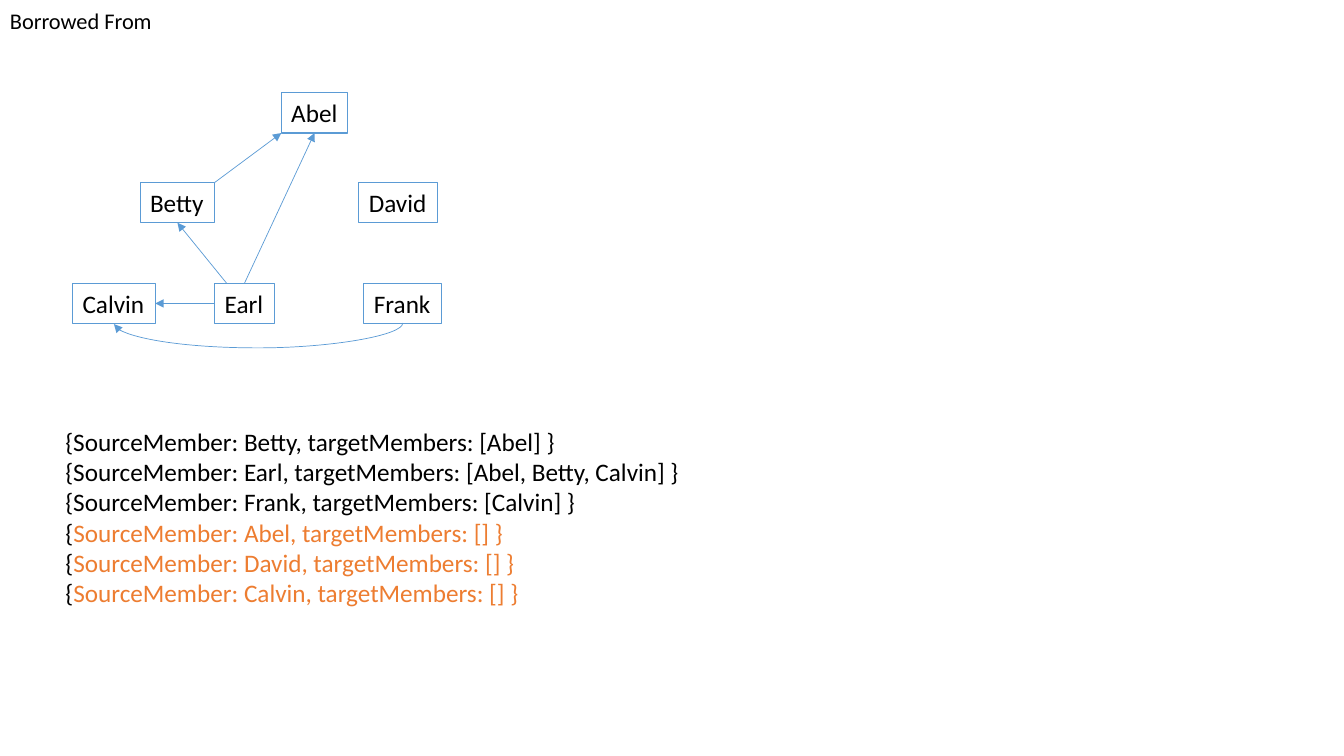
import pptx
import pptx.dml.color
import pptx.enum.shapes
import pptx.enum.text
import pptx.oxml
import pptx.oxml.ns
import pptx.util

Inches = pptx.util.Inches
Pt = pptx.util.Pt
RGBColor = pptx.dml.color.RGBColor
CONNECTOR = pptx.enum.shapes.MSO_CONNECTOR
ANCHOR = pptx.enum.text.MSO_ANCHOR
AUTO_SIZE = pptx.enum.text.MSO_AUTO_SIZE

BLACK = RGBColor(0x00, 0x00, 0x00)
BLUE = RGBColor(0x5B, 0x9B, 0xD5)
ORANGE = RGBColor(0xED, 0x7D, 0x31)

BOX_H = 0.4
# name: left, top, width in inches
MEMBERS = {
    "Abel": (2.79, 0.92, 0.66),
    "Betty": (1.39, 1.81, 0.74),
    "Calvin": (0.72, 2.81, 0.82),
    "David": (3.56, 1.81, 0.78),
    "Earl": (2.13, 2.81, 0.59),
    "Frank": (3.61, 2.81, 0.77),
}
# source, point on its box, target, point on its box (fractions of width and height)
BORROWINGS = [
    ("Betty", (1, 0), "Abel", (0, 1)),
    ("Earl", (0.5, 0), "Abel", (0.5, 1)),
    ("Earl", (0.2, 0), "Betty", (0.5, 1)),
    ("Earl", (0, 0.5), "Calvin", (1, 0.5)),
]
RECORDS = [
    ("Betty", "Abel", BLACK),
    ("Earl", "Abel, Betty, Calvin", BLACK),
    ("Frank", "Calvin", BLACK),
    ("Abel", "", ORANGE),
    ("David", "", ORANGE),
    ("Calvin", "", ORANGE),
]


def box_point(name, fraction):
    left, top, width = MEMBERS[name]
    return left + fraction[0] * width, top + fraction[1] * BOX_H


class Diagram:
    font = "Calibri"

    def __init__(self, slide):
        self.shapes = slide.shapes

    def format_run(self, r, size, color):
        r.font.name = self.font
        r.font.size = Pt(size)
        r.font.color.rgb = color

    def text(self, left, top, width, height, lines, size=18, wrap=False):
        """Add a text box; each line is a list of (text, colour) runs."""
        sp = self.shapes.add_textbox(*map(Inches, (left, top, width, height)))
        tf = sp.text_frame
        tf.word_wrap = wrap
        tf.auto_size = AUTO_SIZE.NONE if wrap else AUTO_SIZE.SHAPE_TO_FIT_TEXT
        for i, runs in enumerate(lines):
            p = tf.add_paragraph() if i else tf.paragraphs[0]
            for content, color in runs:
                r = p.add_run()
                r.text = content
                self.format_run(r, size, color)
        return sp

    def title(self, content):
        tf = self.text(0, 0, 11.5, 0.44, [[(content, BLACK)]], 16, True).text_frame
        tf.vertical_anchor = ANCHOR.MIDDLE
        tf.paragraphs[0].line_spacing = 0.9

    def member(self, name):
        left, top, width = MEMBERS[name]
        sp = self.text(left, top, width, BOX_H, [[(name, BLACK)]])
        sp.line.color.rgb = BLUE
        sp.line.width = Pt(0.75)

    def arrow(self, start, end, kind=CONNECTOR.STRAIGHT):
        cxn = self.shapes.add_connector(kind, *map(Inches, (*start, *end)))
        cxn.line.color.rgb = BLUE
        cxn.line.width = Pt(0.5)
        ns = pptx.oxml.ns.nsdecls("a")
        cxn.line._get_or_add_ln().append(
            pptx.oxml.parse_xml(f'<a:tailEnd {ns} type="triangle"/>'))
        cxn._element.spPr.append(pptx.oxml.parse_xml(f"<a:effectLst {ns}/>"))
        return cxn

    def arc_below(self, start, end, depth=0.25, thin=0.01):
        """Add a curved arrow leftwards: a thin upright connector turned by 90 degrees."""
        x, y = (start[0] + end[0]) / 2, (start[1] + end[1]) / 2
        half = (start[0] - end[0]) / 2
        cxn = self.arrow((x - thin / 2, y - half), (x + thin / 2, y + half),
                         CONNECTOR.CURVE)
        spPr = cxn._element.spPr
        spPr.find(pptx.oxml.ns.qn("a:xfrm")).set("rot", str(90 * 60000))
        geom = spPr.find(pptx.oxml.ns.qn("a:prstGeom"))
        guides = geom.find(pptx.oxml.ns.qn("a:avLst"))
        guides.append(pptx.oxml.parse_xml(
            f'<a:gd {pptx.oxml.ns.nsdecls("a")} name="adj1" '
            f'fmla="val {round(depth / thin * 100000)}"/>'))


def main():
    prs = pptx.Presentation()
    prs.slide_width, prs.slide_height = Inches(13.33), Inches(7.5)
    diagram = Diagram(prs.slides.add_slide(prs.slide_layouts[6]))

    for name in MEMBERS:
        diagram.member(name)
    diagram.title("Borrowed From")
    diagram.text(0.55, 4.18, 6.44, 1.92, [
        [("{", BLACK),
         (f"SourceMember: {source}, targetMembers: [{targets}] }}", color)]
        for source, targets, color in RECORDS
    ])
    for source, start, target, end in BORROWINGS:
        diagram.arrow(box_point(source, start), box_point(target, end))
    diagram.arc_below(box_point("Frank", (0.5, 1)), box_point("Calvin", (0.5, 1)))

    prs.save("out.pptx")


if __name__ == "__main__":
    main()
